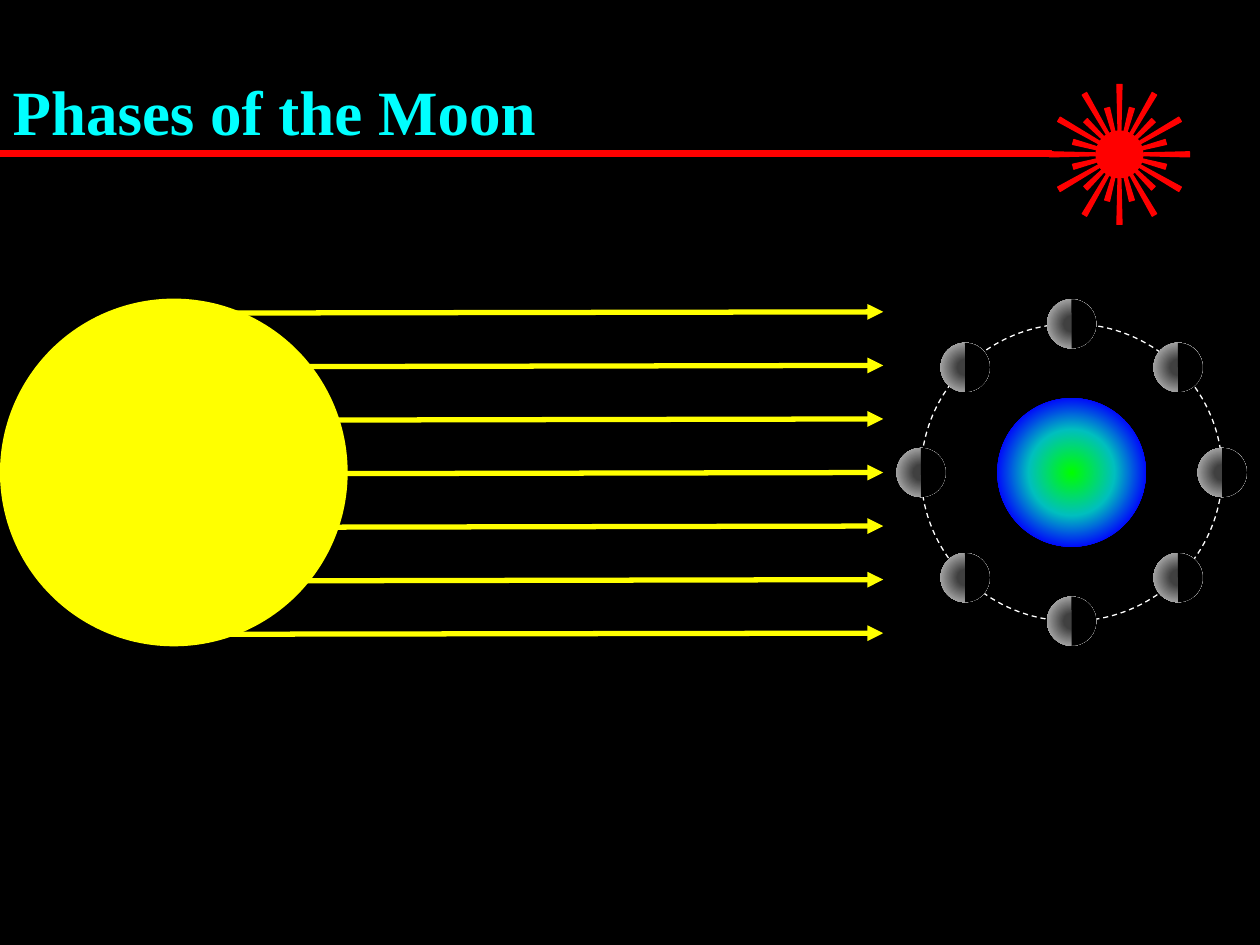
from math import cos, pi, sin

from pptx import Presentation
from pptx.dml.color import RGBColor
from pptx.enum.dml import MSO_LINE
from pptx.enum.shapes import MSO_CONNECTOR, MSO_SHAPE
from pptx.enum.text import MSO_ANCHOR, PP_ALIGN
from pptx.oxml import parse_xml
from pptx.oxml.ns import nsdecls, qn
from pptx.oxml.xmlchemy import OxmlElement
from pptx.util import Inches, Pt

RED, YELLOW, BLACK = "FF0000", "FFFF00", "000000"
MOON = [(22, "404040"), (100, "D9D9D9")]
EARTH = [(0, "00FF00"), (41, "00BFBF"), (73, "0000FF")]


def paint(form, color):
    """Give a fill or font colour format a solid hex colour."""
    if hasattr(form, "solid"):
        form.solid()
        form = form.fore_color
    form.rgb = RGBColor.from_string(color)


def style(shape, fill=None, line=None, width=0.75):
    """Set the fill and outline of a shape and drop its shadow."""
    shape.shadow.inherit = False
    if fill:
        paint(shape.fill, fill)
    else:
        shape.fill.background()
    if line:
        paint(shape.line.fill, line)
        shape.line.width = Pt(width)
    else:
        shape.line.fill.background()
    return shape


def glow(shape, stops):
    """Fill a shape with a round gradient from its middle outwards."""
    shape.fill.gradient()
    marks = "".join(
        f'<a:gs pos="{pos * 1000}"><a:srgbClr val="{color}"/></a:gs>'
        for pos, color in stops)
    grad = parse_xml(
        f'<a:gradFill {nsdecls("a")} rotWithShape="1"><a:gsLst>{marks}</a:gsLst>'
        '<a:path path="circle"><a:fillToRect l="50000" t="50000" r="50000" '
        'b="50000"/></a:path></a:gradFill>')
    props = shape._element.spPr
    props.replace(props.find(qn("a:gradFill")), grad)


def disc(shapes, x, y, size, kind=MSO_SHAPE.OVAL, **look):
    """Add a round shape centred on a point."""
    shape = shapes.add_shape(kind, Inches(x - size / 2), Inches(y - size / 2),
                             Inches(size), Inches(size))
    return style(shape, **look)


def write(frame, text, size=18, color="FFFFFF", bold=False, font="Times New Roman"):
    """Put formatted text in a frame."""
    frame.word_wrap = True
    frame.vertical_anchor = MSO_ANCHOR.MIDDLE
    para = frame.paragraphs[0]
    para.alignment = PP_ALIGN.LEFT
    run = para.add_run()
    run.text = text
    run.font.name, run.font.size, run.font.bold = font, Pt(size), bold
    paint(run.font.color, color)


def spoke(shapes, x, y, angle, inner, outer, thin, thick):
    """Draw one tapered spoke pointing away from a centre."""
    edge = [(inner, -thin), (outer, -thick), (outer, thick), (inner, thin)]
    spots = [(Inches(x + r * cos(angle) - s * sin(angle)),
              Inches(y + r * sin(angle) + s * cos(angle))) for r, s in edge]
    build = shapes.build_freeform(*spots[0], scale=1.0)
    build.add_line_segments(spots[1:], close=True)
    style(build.convert_to_shape(), fill=RED, line=RED)


def burst(slide, left, top, width, height):
    """Draw the red beam that ends in a star at the right of its box."""
    shapes = slide.shapes.add_group_shape().shapes
    y, reach = top + height / 2, height / 2
    x = left + width - reach
    disc(shapes, x, y, 0.37, fill=RED, line=RED)
    for i in range(12):
        spoke(shapes, x, y, i * pi / 6, 0.15, reach, 0.01, 0.02)
        spoke(shapes, x, y, (i + 0.5) * pi / 6, 0.14, 0.38, 0.01, 0.02)
    beam = shapes.add_shape(MSO_SHAPE.RECTANGLE, Inches(left), Inches(y - 0.03),
                            Inches(x - 0.54 - left), Inches(0.05))
    style(beam, fill=RED, line=RED)


def head(slide, left, top, width, height):
    """Place the slide title."""
    title = slide.shapes.title
    title.left, title.top = Inches(left), Inches(top)
    title.width, title.height = Inches(width), Inches(height)
    write(title.text_frame, "Phases of the Moon", size=36, color="00FFFF", bold=True)


def ray(shapes, start, end):
    """Draw a yellow arrow between two points."""
    line = shapes.add_connector(MSO_CONNECTOR.STRAIGHT, *map(Inches, start + end))
    paint(line.line.fill, YELLOW)
    line.line.width = Pt(3)
    tail = OxmlElement("a:tailEnd")
    tail.set("type", "triangle")
    line.line._get_or_add_ln().append(tail)
    line._element.spPr.append(OxmlElement("a:effectLst"))


def sun(slide, left, top, width, height):
    """Draw the sun at the left of its box and seven rays across it."""
    shapes = slide.shapes
    disc(shapes, left + height / 2, top + height / 2, height, fill=YELLOW)
    starts = [1.7] + [2.18] * 5 + [1.17]
    gap = 0.425
    first = top + height / 2 - 3 * gap
    for i, start in enumerate(starts):
        y = first + i * gap
        ray(shapes, (left + start, y + 0.01), (left + width, y))


def orbit(slide, left, top, width, height):
    """Draw the earth and eight half-lit moons on a dashed orbit."""
    shapes = slide.shapes
    x, y = left + width / 2, top + height / 2
    ring = shapes.add_shape(MSO_SHAPE.OVAL, *map(Inches, (left, top, width, height)))
    style(ring, line="FFFFFF").line.dash_style = MSO_LINE.DASH
    for i in range(8):
        angle = i * pi / 4
        spot = x + width / 2 * cos(angle), y + height / 2 * sin(angle)
        glow(disc(shapes, *spot, 0.39), MOON)
        night = disc(shapes, *spot, 0.39, kind=MSO_SHAPE.CHORD, fill=BLACK)
        night.adjustments[0], night.adjustments[1] = 53.69, 162
        night.rotation = 180
    glow(disc(shapes, x, y, 1.18), EARTH)


def main():
    """Build and save the slide."""
    deck = Presentation()
    deck.slide_width, deck.slide_height = Inches(10), Inches(7.5)
    slide = deck.slides.add_slide(deck.slide_layouts[5])
    paint(slide.background.fill, BLACK)
    burst(slide, 0, 0.67, 9.44, 1.11)
    head(slide, 0, 0.25, 8.5, 1.25)
    sun(slide, 0, 2.37, 7.01, 2.76)
    orbit(slide, 7.31, 2.57, 2.39, 2.36)
    deck.save("out.pptx")


if __name__ == "__main__":
    main()
